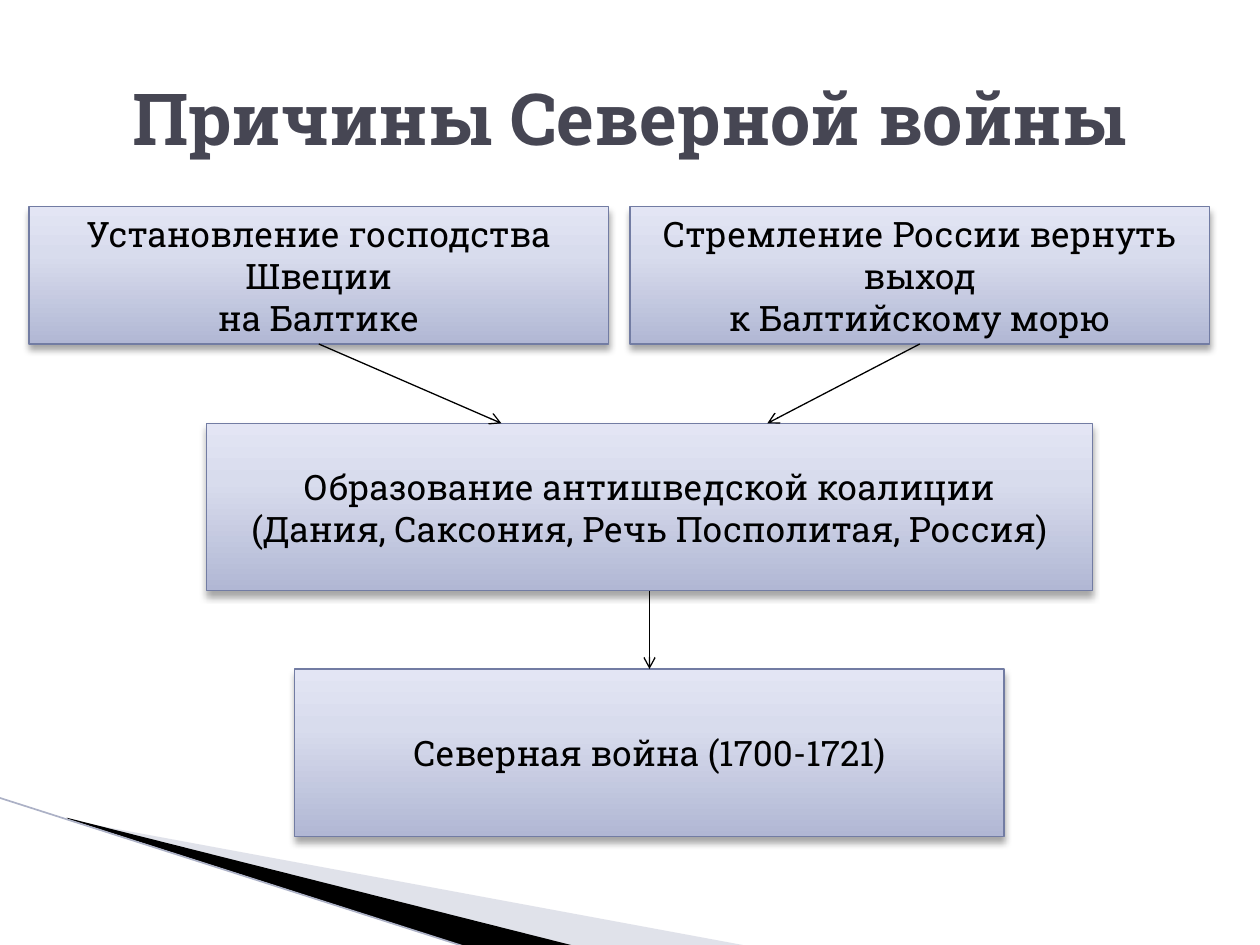
from copy import deepcopy
from dataclasses import dataclass

from lxml import etree
from pptx import Presentation
from pptx.dml.color import RGBColor
from pptx.enum.shapes import MSO_CONNECTOR, MSO_SHAPE
from pptx.enum.text import MSO_ANCHOR, PP_ALIGN
from pptx.oxml.ns import qn
from pptx.util import Inches, Pt

RECTANGLE = MSO_SHAPE.RECTANGLE
STRAIGHT = MSO_CONNECTOR.STRAIGHT
CENTER = PP_ALIGN.CENTER
MIDDLE = MSO_ANCHOR.MIDDLE
TOP, BOTTOM = 0, 2


@dataclass(frozen=True)
class Theme:
    font: str = "Roboto Slab"
    title_size: float = 41
    body_size: float = 20
    title_color: str = "464653"
    ink: str = "000000"
    border: str = "727CA3"
    wedge: str = "B3B7CB"
    accent_line: str = "ACB1C6"
    line_width: float = 0.75
    box_gradient: tuple = ((0, "B1B7D4"), (0.65, "D8DCED"), (1, "E3E5F4"))


class SlideBuilder:
    """Draws on a grid of 100 columns by 75 rows, each cell 0.1 inch."""

    CELL = Inches(0.1)

    def __init__(self, presentation, theme):
        self.theme = theme
        self.slide = presentation.slides.add_slide(presentation.slide_layouts[6])
        self.shapes = self.slide.shapes

    def grid(self, *cells):
        return [round(cell * self.CELL) for cell in cells]

    def set_text(self, shape, text, size, color, bold=False):
        text_frame = shape.text_frame
        text_frame.word_wrap = True
        text_frame.vertical_anchor = MIDDLE
        text_frame.text = text
        for paragraph in text_frame.paragraphs:
            paragraph.alignment = CENTER
            for run in paragraph.runs:
                run.font.name = self.theme.font
                run.font.size = Pt(size)
                run.font.bold = bold
                run.font.color.rgb = RGBColor.from_string(color)

    def title(self, text, *place):
        shape = self.shapes.add_textbox(*self.grid(*place))
        self.set_text(shape, text, self.theme.title_size, self.theme.title_color, bold=True)

    def box(self, text, *place):
        shape = self.shapes.add_shape(RECTANGLE, *self.grid(*place))
        self.fill_gradient(shape)
        shape.line.color.rgb = RGBColor.from_string(self.theme.border)
        shape.line.width = Pt(self.theme.line_width)
        self.drop_shadow(shape)
        self.set_text(shape, text, self.theme.body_size, self.theme.ink)
        return shape

    def fill_gradient(self, shape):
        """Fill from bottom to top with the theme's three stops."""
        fill = shape.fill
        fill.gradient()
        fill.gradient_angle = 90
        stop_list = shape._element.spPr.find(".//" + qn("a:gsLst"))
        stop_list.append(deepcopy(stop_list[-1]))
        for stop, (position, color) in zip(fill.gradient_stops, self.theme.box_gradient):
            stop.position = position
            stop.color.rgb = RGBColor.from_string(color)

    def drop_shadow(self, shape):
        shape.shadow.inherit = False
        effects = shape._element.spPr.find(qn("a:effectLst"))
        shadow = etree.SubElement(effects, qn("a:outerShdw"), blurRad=str(Pt(4)),
                                  dist=str(Pt(3)), dir="5400000", rotWithShape="0")
        color = etree.SubElement(shadow, qn("a:srgbClr"), val=self.theme.ink)
        etree.SubElement(color, qn("a:alpha"), val="35000")

    def wedge(self, points, color, opacity=100):
        start, *rest = [self.grid(*point) for point in points]
        builder = self.shapes.build_freeform(*start)
        builder.add_line_segments(rest, close=True)
        shape = builder.convert_to_shape()
        shape.shadow.inherit = False
        shape.fill.solid()
        shape.fill.fore_color.rgb = RGBColor.from_string(color)
        shape.line.fill.background()
        if opacity < 100:
            fill_color = shape._element.spPr.find(qn("a:solidFill"))[0]
            etree.SubElement(fill_color, qn("a:alpha"), val=str(opacity * 1000))

    def line(self, start, end, color, width):
        connector = self.shapes.add_connector(STRAIGHT, *self.grid(*start, *end))
        connector.line.color.rgb = RGBColor.from_string(color)
        connector.line.width = Pt(width)
        etree.SubElement(connector._element.spPr, qn("a:effectLst"))
        return connector

    def arrow(self, source, end=(0, 0), target=None):
        """Point from the bottom of source to a grid point or to the top of target."""
        connector = self.line((0, 0), end, self.theme.ink, self.theme.line_width)
        connector.begin_connect(source, BOTTOM)
        if target is not None:
            connector.end_connect(target, TOP)
        outline = connector._element.spPr.find(qn("a:ln"))
        etree.SubElement(outline, qn("a:tailEnd"), type="arrow")


def main():
    presentation = Presentation()
    presentation.slide_width, presentation.slide_height = Inches(10), Inches(7.5)
    theme = Theme()
    builder = SlideBuilder(presentation, theme)

    builder.wedge([(5.5, 65.1), (59.5, 75.1), (45.6, 75.1), (5.5, 65)], theme.wedge, opacity=40)
    builder.wedge([(5.3, 64.9), (45.7, 75.1), (37.2, 75.2), (5.4, 65)], theme.ink)
    builder.line((-0.1, 63.3), (37.1, 75.2), theme.accent_line, 0.95)

    builder.title("Причины Северной войны", 5, 3, 90, 12.5)
    sweden = builder.box("Установление господства Швеции\vна Балтике", 2.3, 16.4, 46, 10.9)
    russia = builder.box("Стремление России вернуть выход\vк Балтийскому морю",
                         50, 16.4, 46, 10.9)
    coalition = builder.box("Образование антишведской коалиции\v"
                            "(Дания, Саксония, Речь Посполитая, Россия)",
                            16.4, 33.6, 70.3, 13.3)
    war = builder.box("Северная война (1700-1721)", 23.4, 53.1, 56.3, 13.3)

    builder.arrow(sweden, end=(39.8, 33.6))
    builder.arrow(russia, end=(60.9, 33.6))
    builder.arrow(coalition, target=war)
    presentation.save("out.pptx")


if __name__ == "__main__":
    main()
